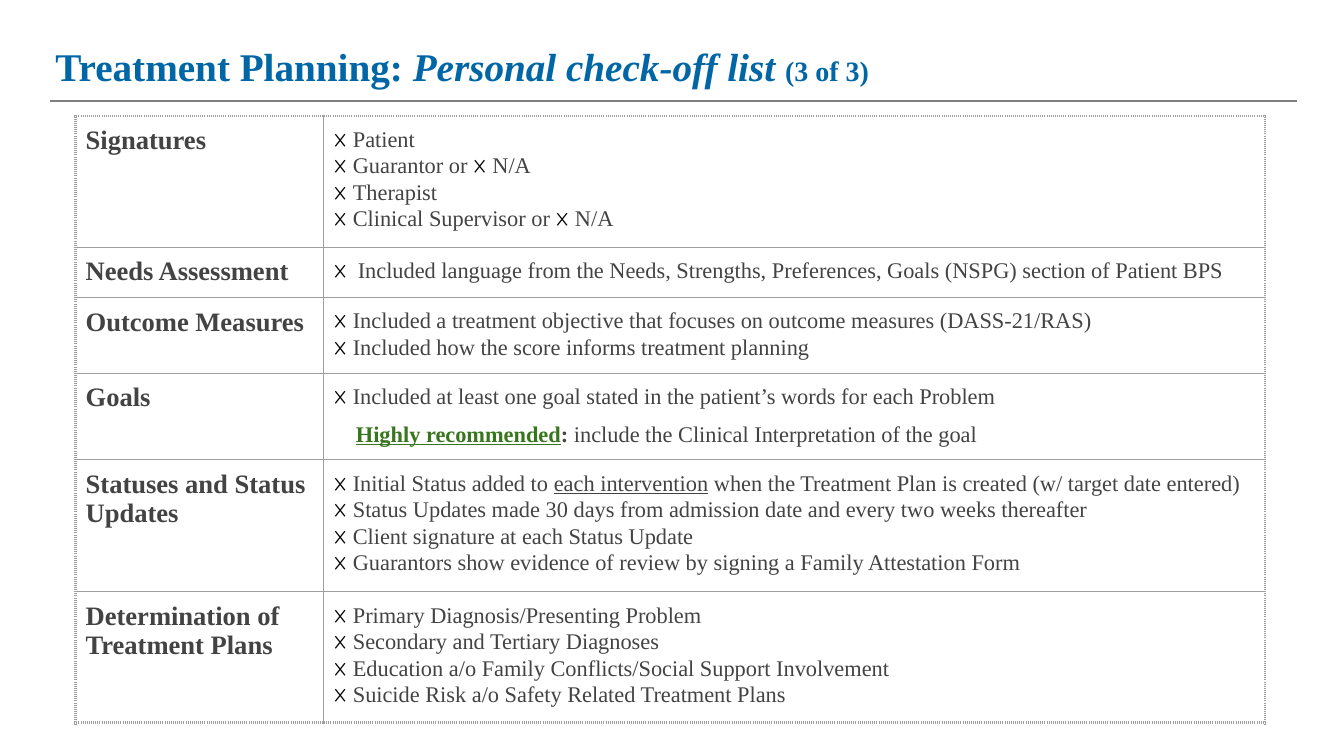
from dataclasses import dataclass

from lxml import etree
from pptx import Presentation
from pptx.dml.color import RGBColor
from pptx.enum.shapes import MSO_CONNECTOR
from pptx.enum.text import MSO_ANCHOR, MSO_AUTO_SIZE, PP_ALIGN
from pptx.oxml import parse_xml
from pptx.oxml.ns import nsdecls, qn
from pptx.util import Pt

LINE = MSO_CONNECTOR.STRAIGHT
TOP = MSO_ANCHOR.TOP
LEFT = PP_ALIGN.LEFT
FIXED = MSO_AUTO_SIZE.NONE

FONT = "Times New Roman"
COLORS = {"blue": "0066A6", "rule": "7F7F7F", "grid": "9E9E9E",
          "text": "434343", "mark": "000000", "green": "38761D"}
INSET = Pt(7.2)

# Font values and colour of each kind of text
STYLES = {
    "title": ({"size": Pt(28), "bold": True, "italic": False}, "blue"),
    "slant": ({"size": Pt(28), "bold": True, "italic": True}, "blue"),
    "count": ({"size": Pt(20), "bold": True, "italic": False}, "blue"),
    "head": ({"size": Pt(19), "bold": True}, "text"),
    "mark": ({"size": Pt(17), "bold": False}, "mark"),
    "body": ({"size": Pt(16), "bold": False}, "text"),
    "under": ({"size": Pt(16), "bold": False, "underline": True}, "text"),
    "tip": ({"size": Pt(16), "bold": True, "underline": True}, "green"),
    "colon": ({"size": Pt(16), "bold": True}, "text"),
}


@dataclass
class Run:
    text: str
    style: str


@dataclass
class Para:
    runs: list[Run]
    before: float = 0
    indent: float = 0
    tab: float = 0


@dataclass
class Row:
    head: str
    height: float
    paras: list[Para]


def check(text: str, gap: str = " ") -> list[Run]:
    return [Run("𐄂" + gap, "mark"), Run(text, "body")]


def checks(*texts: str) -> list[Para]:
    return [Para(check(text)) for text in texts]


ROWS = [
    Row("Signatures", 93.6, [
        Para(check("Patient")),
        Para(check("Guarantor or ") + check("N/A")),
        Para(check("Therapist")),
        Para(check("Clinical Supervisor or ") + check("N/A"))]),
    Row("Needs Assessment", 36, [
        Para(check("Included language from the Needs, Strengths, Preferences, "
                   "Goals (NSPG) section of Patient BPS", "\t"), tab=17.3)]),
    Row("Outcome Measures", 54, checks(
        "Included a treatment objective that focuses on outcome measures (DASS-21/RAS)",
        "Included how the score informs treatment planning")),
    Row("Goals", 61.9, [
        Para(check("Included at least one goal stated in the patient’s words for each Problem")),
        Para([Run("Highly recommended", "tip"), Run(": ", "colon"),
              Run("include the Clinical Interpretation of the goal", "body")],
             before=9, indent=16)]),
    Row("Statuses and Status Updates", 94.3, [
        Para(check("Initial Status added to ") + [
            Run("each intervention", "under"),
            Run(" when the Treatment Plan is created (w/ target date entered)", "body")]),
        *checks(
            "Status Updates made 30 days from admission date and every two weeks thereafter",
            "Client signature at each Status Update",
            "Guarantors show evidence of review by signing a Family Attestation Form")]),
    Row("Determination of Treatment Plans", 93.6, checks(
        "Primary Diagnosis/Presenting Problem",
        "Secondary and Tertiary Diagnoses",
        "Education a/o Family Conflicts/Social Support Involvement",
        "Suicide Risk a/o Safety Related Treatment Plans")),
]
WIDTHS = [177.1, 672.5]


def rgb(name: str) -> RGBColor:
    return RGBColor.from_string(COLORS[name])


def write(frame, paras: list[Para]) -> None:
    for num, item in enumerate(paras):
        para = frame.add_paragraph() if num else frame.paragraphs[0]
        para.alignment = LEFT
        if item.before:
            para.space_before = Pt(item.before)
        props = para._p.get_or_add_pPr()
        if item.indent:
            props.set("marL", str(Pt(item.indent)))
        if item.tab:
            stops = etree.SubElement(props, qn("a:tabLst"))
            etree.SubElement(stops, qn("a:tab"), pos=str(Pt(item.tab)), algn="l")
        for part in item.runs:
            run = para.add_run()
            run.text = part.text
            values, color = STYLES[part.style]
            run.font.name = FONT
            for key, value in values.items():
                setattr(run.font, key, value)
            run.font.color.rgb = rgb(color)


def edge(cell, side: str, outer: bool) -> None:
    width, dash = (2.25, "dot") if outer else (0.75, "solid")
    cell._tc.get_or_add_tcPr().append(parse_xml(
        f'<a:ln{side} {nsdecls("a")} w="{Pt(width)}"><a:solidFill>'
        f'<a:srgbClr val="{COLORS["grid"]}"/></a:solidFill>'
        f'<a:prstDash val="{dash}"/></a:ln{side}>'))


def add_rule(slide) -> None:
    rule = slide.shapes.add_connector(LINE, Pt(36), Pt(72), Pt(926.6), Pt(72))
    rule.line.color.rgb = rgb("rule")
    rule.line.width = Pt(1.5)
    etree.SubElement(rule._element.spPr, qn("a:effectLst"))


def add_title(slide) -> None:
    title = slide.shapes.title
    place = {"left": 32.4, "top": 23, "width": 702.7, "height": 36.7}
    for key, value in place.items():
        setattr(title, key, Pt(value))
    frame = title.text_frame
    form = {"margin_left": INSET, "margin_right": INSET, "margin_top": INSET,
            "margin_bottom": INSET, "vertical_anchor": TOP,
            "word_wrap": True, "auto_size": FIXED}
    for key, value in form.items():
        setattr(frame, key, value)
    write(frame, [Para([Run("Treatment Planning: ", "title"),
                        Run("Personal check-off list ", "slant"),
                        Run("(3 of 3)", "count")])])


def add_list(slide) -> None:
    table = slide.shapes.add_table(
        len(ROWS), len(WIDTHS), Pt(54), Pt(82.8), Pt(sum(WIDTHS)),
        Pt(sum(row.height for row in ROWS))).table
    table.first_row = table.horz_banding = False
    for col, width in zip(table.columns, WIDTHS):
        col.width = Pt(width)
    form = {"margin_left": INSET, "margin_right": INSET, "margin_top": INSET,
            "margin_bottom": INSET, "vertical_anchor": TOP}
    last = len(ROWS) - 1
    for num, row in enumerate(ROWS):
        table.rows[num].height = Pt(row.height)
        for col, paras in enumerate([[Para([Run(row.head, "head")])], row.paras]):
            cell = table.cell(num, col)
            for key, value in form.items():
                setattr(cell, key, value)
            # Dotted outer frame, thin inner grid
            outer = {"L": col == 0, "R": col == 1, "T": num == 0, "B": num == last}
            for side, flag in outer.items():
                edge(cell, side, flag)
            cell.fill.background()
            write(cell.text_frame, paras)


def main() -> None:
    deck = Presentation()
    deck.slide_width, deck.slide_height = Pt(960), Pt(540)
    slide = deck.slides.add_slide(deck.slide_layouts.get_by_name("Title Only"))
    add_rule(slide)
    add_title(slide)
    add_list(slide)
    deck.save("out.pptx")


if __name__ == "__main__":
    main()
